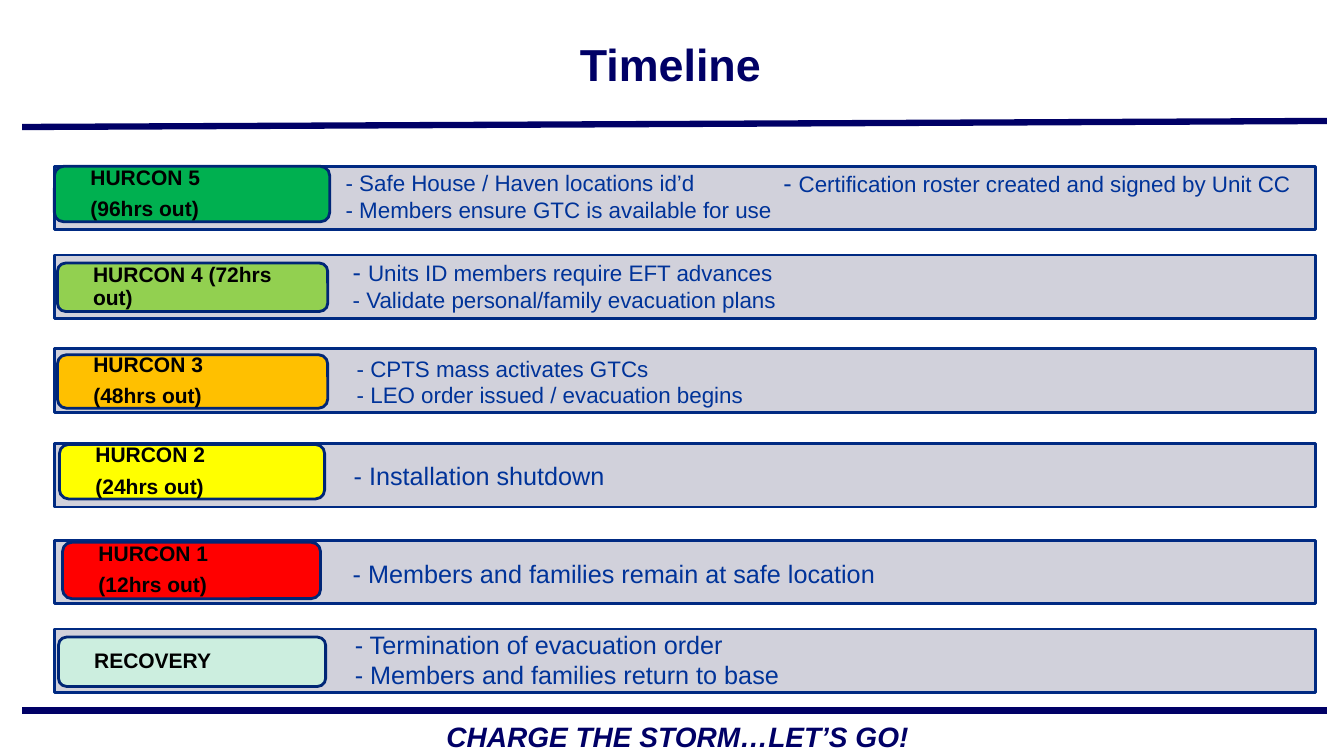
from lxml import etree
from pptx import Presentation
from pptx import util as u
from pptx.dml.color import RGBColor
from pptx.enum import shapes, text
from pptx.oxml.ns import qn

# Grid: one cell is a tenth of an inch
COLUMNS, ROWS = 133.3, 75
BAR_LEFT, BAR_WIDTH, BAR_HEIGHT = 5.4, 125.1, 6.3
NAVY, BLUE = "000066", "003399"


def colour(code):
    return RGBColor.from_string(code)


class Board:
    """Holds the style and the current slide."""

    font_name = "Arial"

    def __init__(self, deck):
        self.page = deck.slides.add_slide(deck.slide_layouts[6])
        self.column = deck.slide_width / COLUMNS
        self.row = deck.slide_height / ROWS

    def place(self, left, top, width, height):
        return [round(left * self.column), round(top * self.row),
                round(width * self.column), round(height * self.row)]

    def rule(self, left, top, right, bottom):
        ends = self.place(left, top, right, bottom)
        line = self.page.shapes.add_connector(shapes.MSO_CONNECTOR.STRAIGHT, *ends)
        line.line.color.rgb = colour(NAVY)
        line.line.width = u.Pt(4.5)
        etree.SubElement(line._element.spPr, qn("a:effectLst"))

    def panel(self, kind, at, fill, edge, opacity=100):
        panel = self.page.shapes.add_shape(kind, *self.place(*at))
        panel.shadow.inherit = False
        panel.fill.solid()
        panel.fill.fore_color.rgb = colour(fill)
        panel.line.color.rgb = colour(edge)
        panel.line.width = u.Pt(2)
        if opacity < 100:
            tint = panel._element.spPr.find(qn("a:solidFill"))[0]
            etree.SubElement(tint, qn("a:alpha"), val=str(opacity * 1000))
        return panel

    def add_lines(self, box, lines, frame_format=None, para_format=None, **font_format):
        """Each line is a string, or a list of (text, size) pairs."""
        frame = box.text_frame
        frame.word_wrap = True
        for name, value in (frame_format or {}).items():
            setattr(frame, name, value)
        for index, line in enumerate(lines):
            para = frame.add_paragraph() if index else frame.paragraphs[0]
            for name, value in (para_format or {}).items():
                setattr(para, name, value)
            spans = [(line, font_format["size"])] if isinstance(line, str) else line
            for words, size in spans:
                span = para.add_run()
                span.text = words
                style = {"name": self.font_name, **font_format, "size": u.Pt(size)}
                span.font.color.rgb = colour(style.pop("color"))
                for name, value in style.items():
                    setattr(span.font, name, value)

    def label(self, at, lines, **formats):
        box = self.page.shapes.add_textbox(*self.place(*at))
        self.add_lines(box, lines, **formats)

    def stage(self, top, badge_at, fill, lines):
        """A grey bar with a coloured badge at its left end."""
        self.panel(shapes.MSO_SHAPE.RECTANGLE, (BAR_LEFT, top, BAR_WIDTH, BAR_HEIGHT),
                   "CCCDD8", "002A82", opacity=90)
        badge = self.panel(shapes.MSO_SHAPE.ROUNDED_RECTANGLE, badge_at, fill, "002676")
        self.add_lines(badge, lines,
                       {"margin_left": u.Inches(0.33), "margin_right": u.Inches(0.33),
                        "margin_top": 0, "margin_bottom": 0,
                        "vertical_anchor": text.MSO_ANCHOR.MIDDLE},
                       {"alignment": text.PP_ALIGN.LEFT, "line_spacing": 0.9,
                        "space_after": u.Pt(6)},
                       size=15, bold=True, color="000000")


# Bar top, badge place, badge colour, badge lines
STAGES = [
    (16.5, (5.4, 16.5, 27.3, 5.5), "00B050", ["HURCON 5", "(96hrs out)"]),
    (25.3, (5.7, 26.1, 26.8, 4.8), "92D050", ["HURCON 4 (72hrs out)"]),
    (34.6, (5.7, 35.2, 26.8, 5.3), "FFC000", ["HURCON 3", "(48hrs out)"]),
    (44.0, (5.9, 44.1, 26.3, 5.4), "FFFF00", ["HURCON 2", "(24hrs out)"]),
    (53.6, (6.2, 53.8, 25.6, 5.6), "FF0000", ["HURCON 1", "(12hrs out)"]),
    (62.4, (5.8, 63.2, 26.5, 4.9), "CCEEDF", ["RECOVERY"]),
]

# Place, text size, lines
ACTIONS = [
    ((33.3, 16.3, 58.3, 6.4), 16,
     ["- Safe House / Haven locations id’d", "- Members ensure GTC is available for use"]),
    ((34, 24.9, 53.6, 6.7), 16,
     [[("- ", 18), ("Units ID members require EFT advances", 16)],
      "- Validate personal/family evacuation plans"]),
    ((34.4, 34.7, 42.3, 6.4), 16,
     ["- CPTS mass activates GTCs", "- LEO order issued / evacuation begins"]),
    ((34.1, 45.2, 27.1, 4), 18, ["- Installation shutdown"]),
    ((34, 54.9, 54.3, 4), 18, ["- Members and families remain at safe location"]),
    ((34.2, 61.9, 44.5, 7.1), 18,
     ["- Termination of evacuation order", "- Members and families return to base"]),
    ((76.7, 16.1, 52.5, 4), 16,
     [[("- ", 18), ("Certification roster created and signed by Unit CC", 16)]]),
]


def main():
    deck = Presentation()
    deck.slide_width, deck.slide_height = u.Inches(13.33), u.Inches(7.5)
    board = Board(deck)
    centred = {"alignment": text.PP_ALIGN.CENTER}

    # Rules, motto and title
    board.rule(2.2, 12.6, 131.6, 12)
    board.rule(2.2, 70.5, 131.6, 70.5)
    board.label((6.1, 70.9, 122.2, 4.1), ["CHARGE THE STORM…LET’S GO!"],
                para_format=centred, size=20, bold=True, italic=True, color=NAVY)
    board.label((18.1, 0.1, 96.8, 12.5), ["Timeline"],
                frame_format={"vertical_anchor": text.MSO_ANCHOR.MIDDLE},
                para_format=centred, size=32, bold=True, color=NAVY)

    # Stages of the timeline
    for stage in STAGES:
        board.stage(*stage)

    # Actions in each stage
    for at, size, lines in ACTIONS:
        board.label(at, lines, size=size, color=BLUE)

    deck.save("out.pptx")


if __name__ == "__main__":
    main()
